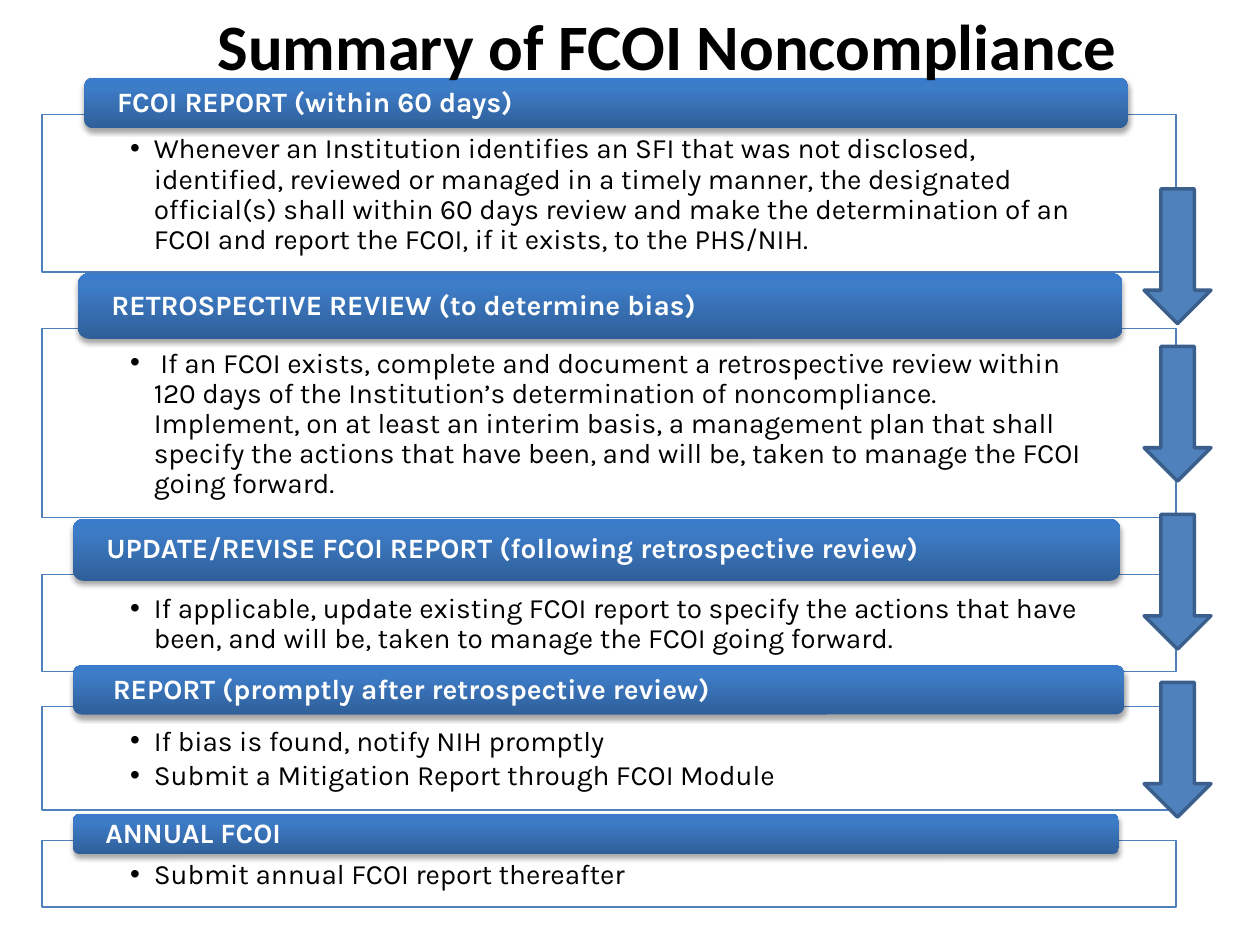
from copy import deepcopy
from dataclasses import dataclass

from lxml import etree
from pptx import Presentation
from pptx.dml.color import RGBColor
from pptx.enum.shapes import MSO_SHAPE
from pptx.enum.text import MSO_ANCHOR, PP_ALIGN
from pptx.oxml.ns import qn
from pptx.util import Pt

RECTANGLE = MSO_SHAPE.RECTANGLE
ROUNDED = MSO_SHAPE.ROUNDED_RECTANGLE
DOWN_ARROW = MSO_SHAPE.DOWN_ARROW
TOP, MIDDLE = MSO_ANCHOR.TOP, MSO_ANCHOR.MIDDLE
LEFT, CENTER = PP_ALIGN.LEFT, PP_ALIGN.CENTER

BLACK, WHITE, BLUE, ARROW_EDGE = "000000", "FFFFFF", "4F81BD", "3A5F8C"
BAR_STOPS = ((0, "2F5F99"), (0.8, "3D7CC7"), (1, "3A7CCB"))
PANEL_LEFT, PANEL_WIDTH = 24, 648
ARROW_LEFT, ARROW_WIDTH, ARROW_HEIGHT = 653.8, 38.2, 77
ARROW_TOPS = (108, 198, 294, 390)
BULLET_INDENT = 13.5


@dataclass
class Frame:
    left: float
    top: float
    width: float
    height: float


@dataclass
class Step:
    heading: str
    bar: Frame
    panel_top: float
    panel_height: float
    bullets: tuple[str, ...]


STEPS = (
    Step("FCOI REPORT (within 60 days)", Frame(48.2, 44.6, 596.2, 28.8), 65.5, 90, (
        "Whenever an Institution identifies an SFI that was not disclosed, identified, "
        "reviewed or managed in a timely manner, the designated official(s) shall within "
        "60 days review and make the determination of an FCOI and report the FCOI, "
        "if it exists, to the PHS/NIH.",)),
    Step("RETROSPECTIVE REVIEW (to determine bias)", Frame(44.6, 156.2, 596.9, 37.4), 187.9, 108, (
        " If an FCOI exists, complete and document a retrospective review within 120 days "
        "of the Institution’s determination of noncompliance.  Implement, on at least an "
        "interim basis, a management plan that shall specify the actions that have been, "
        "and will be, taken to manage the FCOI going forward.",)),
    Step("UPDATE/REVISE FCOI REPORT (following retrospective review)",
         Frame(41.8, 296.6, 598.3, 35.3), 328.3, 55.4, (
             "If applicable, update existing FCOI report to specify the actions that have "
             "been, and will be, taken to manage the FCOI going forward.",)),
    Step(" REPORT (promptly after retrospective review)", Frame(41.8, 380.2, 600.5, 28.1), 403.9, 59, (
        "If bias is found, notify NIH promptly",
        "Submit a Mitigation Report through FCOI Module")),
    Step("ANNUAL FCOI", Frame(41.8, 465.1, 597.6, 23), 480.2, 38.2, (
        "Submit annual FCOI report thereafter",)),
)


def rgb(value: str) -> RGBColor:
    return RGBColor.from_string(value)


def add_block(page, kind, frame: Frame):
    block = page.shapes.add_shape(
        kind, Pt(frame.left), Pt(frame.top), Pt(frame.width), Pt(frame.height))
    block.shadow.inherit = False
    return block


def paint(block, fill: str, line: str, weight: float) -> None:
    block.fill.solid()
    block.fill.fore_color.rgb = rgb(fill)
    block.line.color.rgb = rgb(line)
    block.line.width = Pt(weight)


def set_insets(text_frame, side: float, top: float, bottom: float) -> None:
    text_frame.margin_left = text_frame.margin_right = Pt(side)
    text_frame.margin_top, text_frame.margin_bottom = Pt(top), Pt(bottom)


def style(para, color: str, bold: bool = False, font: str = "Karla",
          size: float = 16, align=LEFT) -> None:
    para.alignment = align
    para.font.name, para.font.size, para.font.bold = font, Pt(size), bold
    para.font.color.rgb = rgb(color)


def add_bullet(para) -> None:
    properties = para._p.get_or_add_pPr()
    properties.set("marL", str(Pt(BULLET_INDENT)))
    properties.set("indent", str(-Pt(BULLET_INDENT)))
    etree.SubElement(properties, qn("a:buFont"), typeface="Arial")
    etree.SubElement(properties, qn("a:buChar"), char="•")


def add_panel(page, step: Step) -> None:
    panel = add_block(page, RECTANGLE,
                      Frame(PANEL_LEFT, step.panel_top, PANEL_WIDTH, step.panel_height))
    paint(panel, WHITE, BLUE, 0.75)
    fill_color = panel._element.spPr.find(qn("a:solidFill"))[0]
    etree.SubElement(fill_color, qn("a:alpha"), val="90000")
    text_frame = panel.text_frame
    text_frame.text = "\n".join(step.bullets)
    text_frame.word_wrap = True
    text_frame.vertical_anchor = TOP
    set_insets(text_frame, 50.4, 11.5, 8.6)
    for para in text_frame.paragraphs:
        add_bullet(para)
        para.line_spacing = 0.9
        para.space_after = Pt(2.4)
        style(para, BLACK)


def add_bar_gradient(bar) -> None:
    """Fill from dark at the bottom to light at the top."""
    bar.fill.gradient()
    bar.fill.gradient_angle = 90
    stop_list = bar._element.spPr.find(qn("a:gradFill")).find(qn("a:gsLst"))
    stop_list.append(deepcopy(stop_list[-1]))
    for stop, (position, color) in zip(bar.fill.gradient_stops, BAR_STOPS):
        stop.position = position
        stop.color.rgb = rgb(color)


def add_bar_shadow(bar) -> None:
    effects = bar._element.spPr.find(qn("a:effectLst"))
    shadow = etree.SubElement(effects, qn("a:outerShdw"), blurRad=str(Pt(3.1)),
                              dist=str(Pt(1.8)), dir="5400000", rotWithShape="0")
    color = etree.SubElement(shadow, qn("a:srgbClr"), val=BLACK)
    etree.SubElement(color, qn("a:alpha"), val="35000")


def add_bar(page, step: Step) -> None:
    bar = add_block(page, ROUNDED, step.bar)
    add_bar_gradient(bar)
    bar.line.fill.background()
    add_bar_shadow(bar)
    text_frame = bar.text_frame
    text_frame.text = step.heading
    text_frame.word_wrap = True
    text_frame.vertical_anchor = MIDDLE
    set_insets(text_frame, 17.3, 0, 0)
    heading = text_frame.paragraphs[0]
    heading.line_spacing = 0.9
    style(heading, WHITE, bold=True)


def add_title(page) -> None:
    box = page.shapes.add_textbox(Pt(0), Pt(0), Pt(762), Pt(52))
    box.text_frame.text = "Summary of FCOI Noncompliance"
    box.text_frame.word_wrap = True
    style(box.text_frame.paragraphs[0], BLACK, bold=True, font="Calibri", size=37, align=CENTER)


def main() -> None:
    deck = Presentation()
    deck.slide_width, deck.slide_height = Pt(720), Pt(540)
    page = deck.slides.add_slide(deck.slide_layouts[6])
    for step in STEPS:
        add_panel(page, step)
        add_bar(page, step)
    for top in ARROW_TOPS:
        arrow = add_block(page, DOWN_ARROW, Frame(ARROW_LEFT, top, ARROW_WIDTH, ARROW_HEIGHT))
        paint(arrow, BLUE, ARROW_EDGE, 2)
    add_title(page)
    deck.save("out.pptx")


if __name__ == "__main__":
    main()
